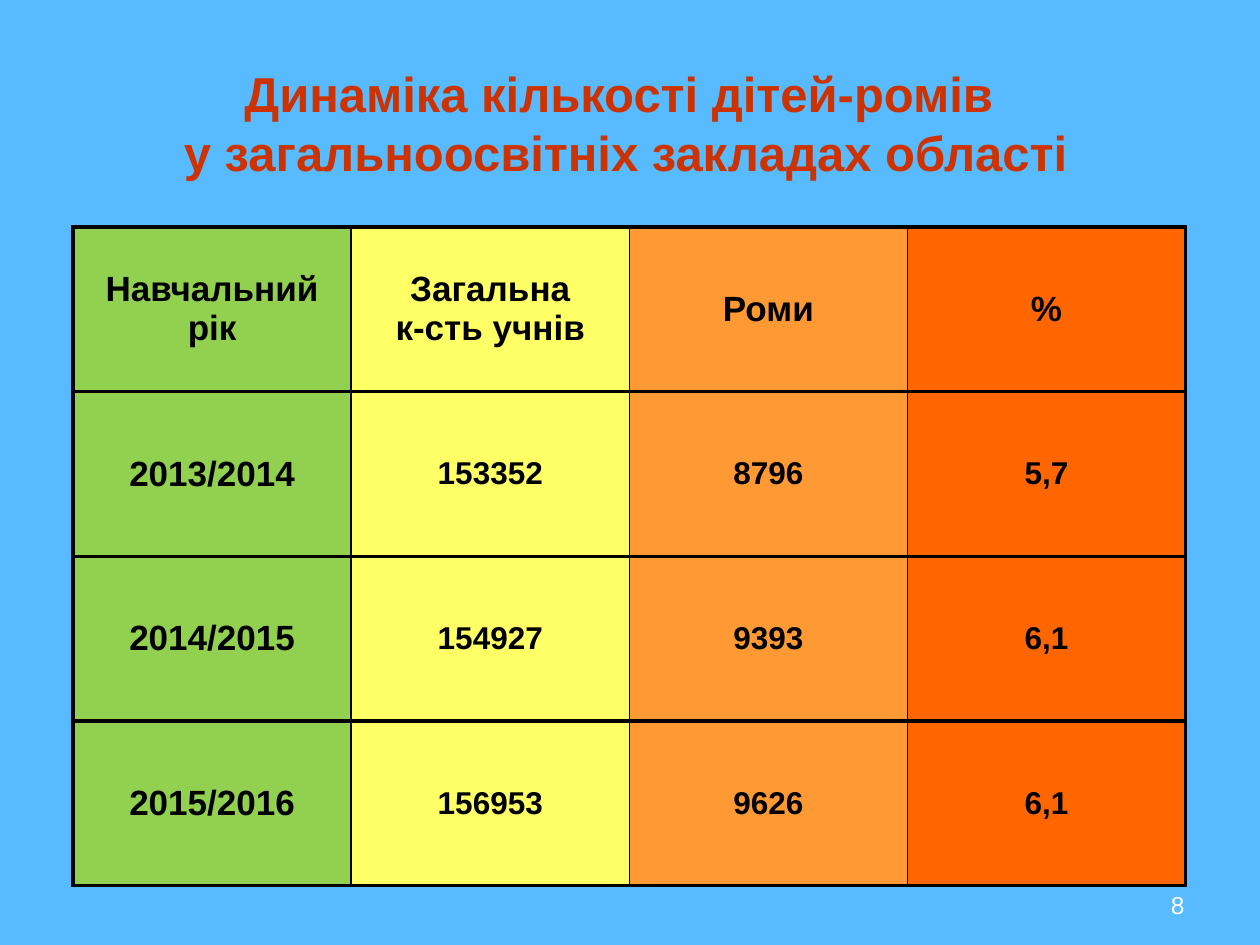
from copy import deepcopy

from pptx import Presentation
from pptx.dml.color import RGBColor
from pptx.enum.text import MSO_ANCHOR as Anchor, PP_ALIGN as Align
from pptx.oxml import parse_xml
from pptx.oxml.ns import nsdecls, qn
from pptx.util import Inches, Pt

COLORS = {
    "background": "58BBFF",
    "title": "CC3300",
    "text": "000000",
    "number": "FFFFFF",
    "border": "000000",
}
COLUMN_FILLS = ["92D050", "FFFF66", "FF9933", "FF6600"]
ROWS = [
    ["Навчальний рік", "Загальна\nк-сть учнів", "Роми", "%"],
    ["2013/2014", "153352", "8796", "5,7"],
    ["2014/2015", "154927", "9393", "6,1"],
    ["2015/2016", "156953", "9626", "6,1"],
]
THIN, THICK = 1, 2.25


class SlideBuilder:
    """Holds the style and the current slide."""

    font_name = "Arial"

    def __init__(self, slide):
        self.slide = slide
        fill = slide.background.fill
        fill.solid()
        fill.fore_color.rgb = RGBColor.from_string(COLORS["background"])

    def add_run(self, paragraph, text, size, color, bold=True):
        run = paragraph.add_run()
        run.text = text
        run.font.name = self.font_name
        run.font.size = Pt(size)
        run.font.bold = bold
        run.font.color.rgb = RGBColor.from_string(COLORS[color])
        return run

    def add_title(self, lines, left, top, width, height):
        title = self.slide.shapes.title
        title.left, title.top = Inches(left), Inches(top)
        title.width, title.height = Inches(width), Inches(height)
        title.text_frame.vertical_anchor = Anchor.MIDDLE
        paragraph = title.text_frame.paragraphs[0]
        paragraph.alignment = Align.CENTER
        for index, line in enumerate(lines):
            if index:
                paragraph.add_line_break()
            run = self.add_run(paragraph, line, 28, "title")
        for line_break in paragraph._p.findall(qn("a:br")):
            line_break.append(deepcopy(run._r.rPr))

    def set_borders(self, cell, widths):
        properties = cell._tc.get_or_add_tcPr()
        for index, (side, width) in enumerate(zip("LRTB", widths)):
            line = parse_xml(
                f'<a:ln{side} {nsdecls("a")} w="{Pt(width)}"><a:solidFill>'
                f'<a:srgbClr val="{COLORS["border"]}"/></a:solidFill></a:ln{side}>'
            )
            properties.insert(index, line)

    def add_cell(self, cell, text, size, fill):
        cell.fill.solid()
        cell.fill.fore_color.rgb = RGBColor.from_string(fill)
        cell.vertical_anchor = Anchor.MIDDLE
        frame = cell.text_frame
        for index, line in enumerate(text.split("\n")):
            paragraph = frame.add_paragraph() if index else frame.paragraphs[0]
            paragraph.alignment = Align.CENTER
            self.add_run(paragraph, line, size, "text")

    def add_table(self, rows, left, top, width, height):
        last = len(rows[0]) - 1
        table = self.slide.shapes.add_table(
            len(rows), len(rows[0]),
            Inches(left), Inches(top), Inches(width), Inches(height),
        ).table
        table.first_row = table.horz_banding = False
        for row, values in enumerate(rows):
            for column, value in enumerate(values):
                cell = table.cell(row, column)
                size = 18 if row and column else 20
                self.add_cell(cell, value, size, COLUMN_FILLS[column])
                left_width = THIN if column else THICK
                right_width = THICK if column == last else THIN
                self.set_borders(cell, [left_width, right_width, THICK, THICK])

    def add_number(self, text, left, top, width, height):
        box = self.slide.shapes.add_textbox(
            Inches(left), Inches(top), Inches(width), Inches(height)
        )
        frame = box.text_frame
        frame.word_wrap = True
        frame.vertical_anchor = Anchor.BOTTOM
        paragraph = frame.paragraphs[0]
        paragraph.alignment = Align.RIGHT
        self.add_run(paragraph, text, 14, "number", bold=False)


def main():
    presentation = Presentation()
    presentation.slide_width, presentation.slide_height = Inches(10), Inches(7.5)
    builder = SlideBuilder(presentation.slides.add_slide(presentation.slide_layouts[5]))
    builder.add_title(
        ["Динаміка кількості дітей-ромів ", "у загальноосвітніх закладах області"],
        0.43, 0.3, 9.07, 1.34,
    )
    builder.add_table(ROWS, 0.58, 1.8, 8.83, 5.23)
    builder.add_number("8", 7.17, 6.83, 2.33, 0.52)
    presentation.save("out.pptx")


if __name__ == "__main__":
    main()
